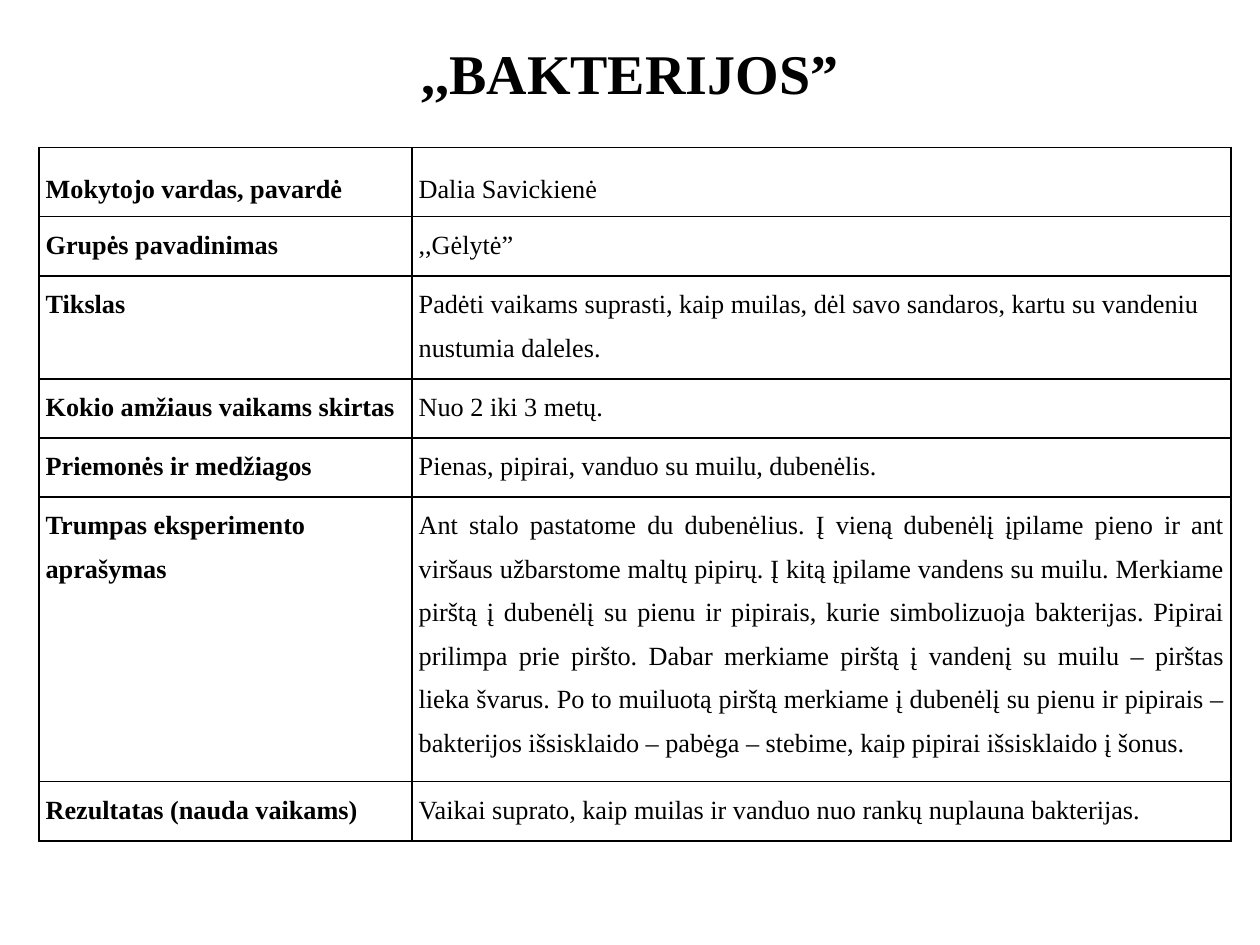
"""Builds a one-slide experiment card with a title and a bordered table."""
from lxml import etree
from pptx import Presentation
from pptx import util as u
from pptx.dml.color import RGBColor
from pptx.enum import text
from pptx.oxml.ns import qn

BLACK = RGBColor(0, 0, 0)
FONT = "Times New Roman"
COLUMNS = (7.52, 16.51)
ROWS = (
    (1.4, "Mokytojo vardas, pavardė", "Dalia Savickienė"),
    (1.19, "Grupės pavadinimas", ",,Gėlytė”"),
    (2.08, "Tikslas",
     "Padėti vaikams suprasti, kaip muilas, dėl savo sandaros, kartu su "
     "vandeniu nustumia daleles."),
    (1.19, "Kokio amžiaus vaikams skirtas", "Nuo 2 iki 3 metų."),
    (1.19, "Priemonės ir medžiagos", "Pienas, pipirai, vanduo su muilu, dubenėlis."),
    (5.74, "Trumpas eksperimento aprašymas",
     "Ant stalo pastatome du dubenėlius. Į vieną dubenėlį įpilame pieno ir ant "
     "viršaus užbarstome maltų pipirų. Į kitą įpilame vandens su muilu. Merkiame "
     "pirštą į dubenėlį su pienu ir pipirais, kurie simbolizuoja bakterijas. "
     "Pipirai prilimpa prie piršto. Dabar merkiame pirštą į vandenį su muilu – "
     "pirštas lieka švarus. Po to muiluotą pirštą merkiame į dubenėlį su pienu "
     "ir pipirais – bakterijos išsisklaido – pabėga – stebime, kaip pipirai "
     "išsisklaido į šonus."),
    (1.19, "Rezultatas (nauda vaikams)",
     "Vaikai suprato, kaip muilas ir vanduo nuo rankų nuplauna bakterijas."),
)
DESCRIPTION_ROW = 5


def write(tf, content, size=15, bold=False, align=text.PP_ALIGN.LEFT,
          line_spacing=None, space_after=None):
    tf.word_wrap = True
    p = tf.paragraphs[0]
    p.alignment = align
    p.line_spacing = line_spacing
    p.space_after = space_after
    r = p.add_run()
    r.text = content
    r.font.name = FONT
    r.font.size = u.Pt(size)
    r.font.bold = bold
    r.font.color.rgb = BLACK


class Card:
    def __init__(self, slide, border=1, inset=0.13):
        self.s = slide
        self.border = u.Pt(border)
        self.inset = u.Cm(inset)

    def title(self, content, left, top, width, height):
        sp = self.s.shapes.add_textbox(u.Cm(left), u.Cm(top), u.Cm(width), u.Cm(height))
        tf = sp.text_frame
        tf.margin_top = u.Cm(0.2)
        write(tf, content, size=32, bold=True, align=text.PP_ALIGN.CENTER)

    def outline(self, cell):
        props = cell._tc.get_or_add_tcPr()
        for side in ("lnL", "lnR", "lnT", "lnB"):
            line = etree.SubElement(props, qn(f"a:{side}"), w=str(self.border))
            fill = etree.SubElement(line, qn("a:solidFill"))
            etree.SubElement(fill, qn("a:srgbClr"), val=str(BLACK))

    def cell(self, cell, content, **style):
        self.outline(cell)
        cell.fill.background()
        cell.margin_left = cell.margin_right = self.inset
        cell.margin_top = cell.margin_bottom = 0
        write(cell.text_frame, content, line_spacing=1.5, space_after=u.Pt(10), **style)

    def table(self, rows, columns, left, top):
        height = sum(row[0] for row in rows)
        table = self.s.shapes.add_table(
            len(rows), len(columns), u.Cm(left), u.Cm(top),
            u.Cm(sum(columns)), u.Cm(height)).table
        table.first_row = table.horz_banding = False
        for column, width in zip(table.columns, columns):
            column.width = u.Cm(width)
        for i, (row_height, label, value) in enumerate(rows):
            table.rows[i].height = u.Cm(row_height)
            align = text.PP_ALIGN.JUSTIFY if i == DESCRIPTION_ROW else text.PP_ALIGN.LEFT
            self.cell(table.cell(i, 0), label, bold=True)
            self.cell(table.cell(i, 1), value, align=align)
        for cell in table.rows[0].cells:
            cell.vertical_anchor = text.MSO_ANCHOR.MIDDLE


def main():
    prs = Presentation()
    prs.slide_width, prs.slide_height = u.Cm(25.4), u.Cm(19.05)
    card = Card(prs.slides.add_slide(prs.slide_layouts[6]))
    card.table(ROWS, COLUMNS, left=0.79, top=2.97)
    card.title(",,BAKTERIJOS”", left=0, top=0.58, width=25.4, height=2.39)
    prs.save("out.pptx")


if __name__ == "__main__":
    main()
